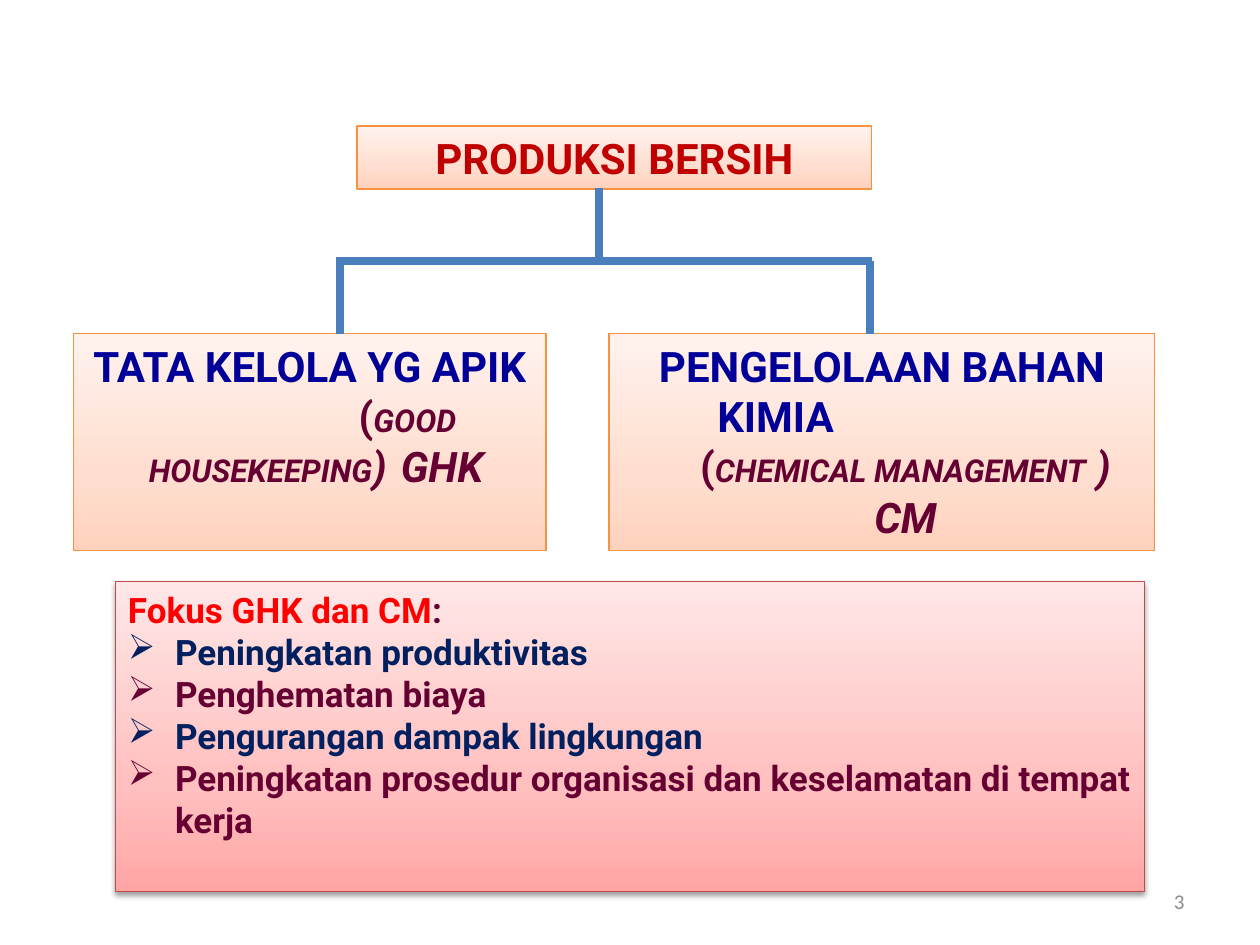
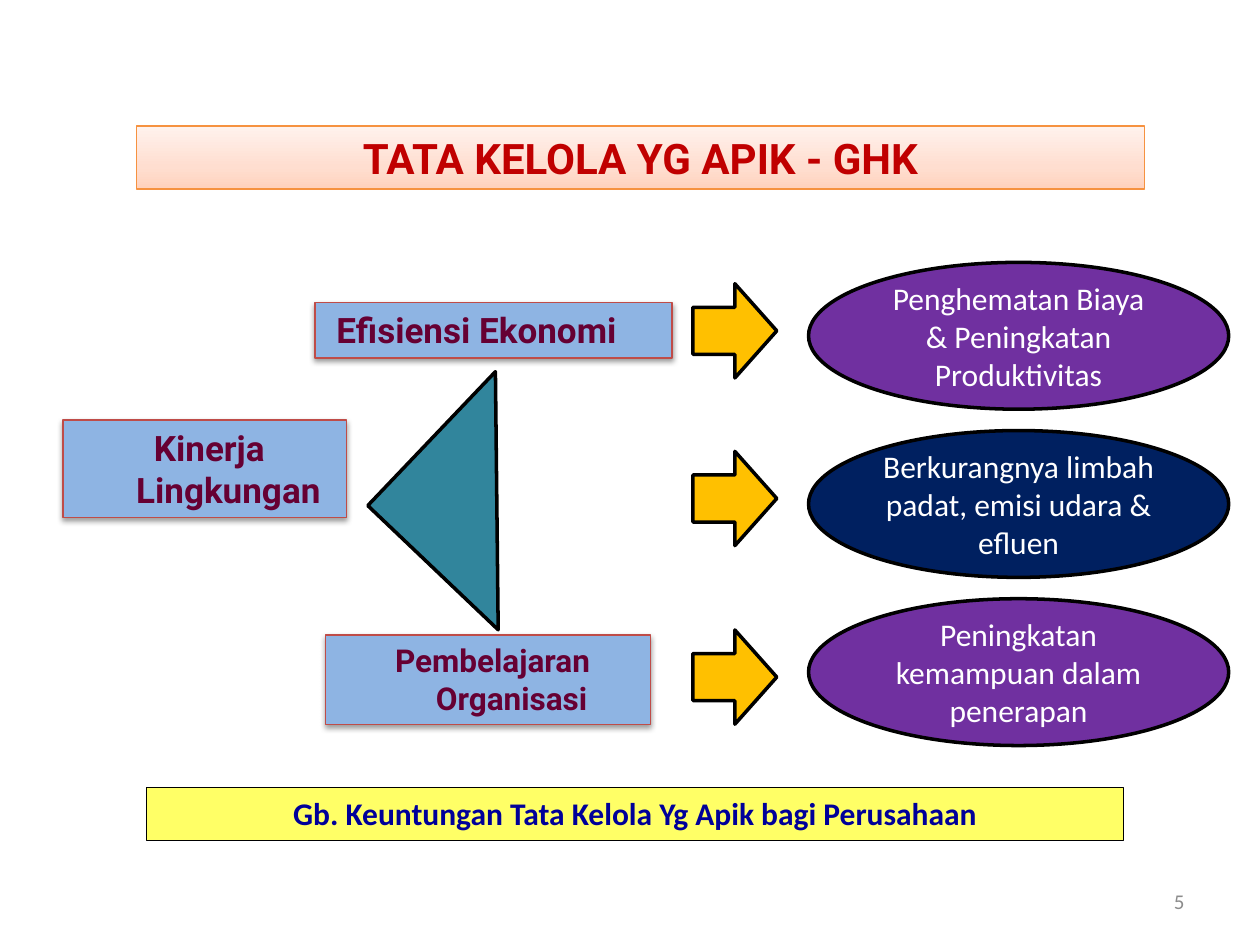
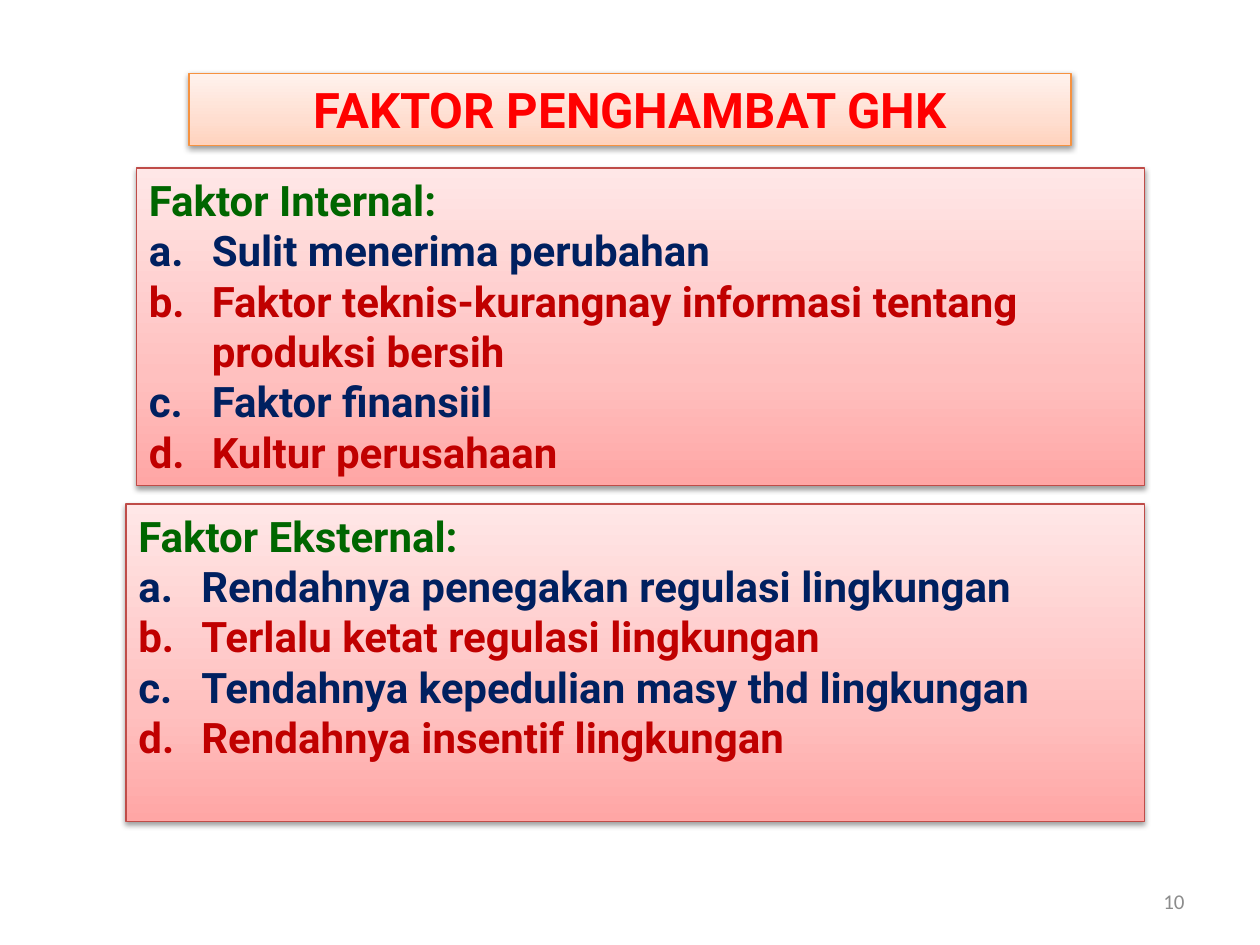
from collections import namedtuple

from lxml.etree import SubElement
from pptx import Presentation
from pptx.dml.color import RGBColor
from pptx.enum.shapes import MSO_CONNECTOR as Connector, MSO_SHAPE as Preset
from pptx.enum.text import MSO_ANCHOR as Anchor, PP_ALIGN as Align
from pptx.oxml.ns import qn
from pptx.util import Cm, Pt

COLORS = {
    "crimson": "C00000", "red": "FF0000", "blue": "000099", "navy": "002060",
    "plum": "660033", "green": "006600", "purple": "7030A0", "white": "FFFFFF",
    "black": "000000", "gray": "8C8C8C", "sky": "8EB4E3", "teal": "31859C",
    "gold": "FFC000", "yellow": "FFFF66", "steel": "4B7EBC",
    "orange_line": "F69240", "red_line": "BF4C48",
    "peach_dark": "FFD2BD", "peach": "FFDED0", "peach_light": "FFF2ED",
    "rose_dark": "FFA6A5", "rose": "FFC0BF", "rose_light": "FFE7E7",
}
PEACH = ("peach_dark", "peach", "peach_light")
ROSE = ("rose_dark", "rose", "rose_light")
STOPS = (0, 35000, 100000)
HEADING_FONT, BODY_FONT = "Roboto", "Calibri"
HANGING = 0.95


class Box(namedtuple("Box", "left top width height")):
    def inside(self, left, top, width, height):
        return Box(self.left + left, self.top + top, width, height)

    def lengths(self):
        return [Cm(value) for value in self]


def rgb(name):
    return RGBColor.from_string(COLORS[name])


def add_text(paragraph, text, size=24, color="black", bold=True, italic=False,
             font=HEADING_FONT):
    run = paragraph.add_run()
    run.text = text
    run.font.name = font
    run.font.size = Pt(size)
    run.font.bold = bold
    run.font.italic = italic
    run.font.color.rgb = rgb(color)


def next_paragraph(frame, align=Align.LEFT, margin=0, first=0, bullet=None, tab=None):
    paragraph = frame.paragraphs[0]
    if paragraph.runs:
        paragraph = frame.add_paragraph()
    paragraph.alignment = align
    properties = paragraph._p.get_or_add_pPr()
    properties.set("marL", str(Cm(margin)))
    properties.set("indent", str(Cm(first)))
    if bullet == "letter":
        SubElement(properties, qn("a:buAutoNum"), type="alphaLcPeriod")
    elif bullet:
        SubElement(properties, qn("a:buChar"), char=bullet)
    else:
        SubElement(properties, qn("a:buNone"))
    if tab:
        tabs = SubElement(properties, qn("a:tabLst"))
        SubElement(tabs, qn("a:tab"), pos=str(Cm(tab)), algn="l")
    return paragraph


def fill_gradient(shape, names):
    shape.fill.gradient()
    shape.fill.gradient_angle = 90
    stops = shape._element.spPr.find(".//" + qn("a:gsLst"))
    stops.clear()
    for position, name in zip(STOPS, names):
        stop = SubElement(stops, qn("a:gs"), pos=str(position))
        SubElement(stop, qn("a:srgbClr"), val=COLORS[name])


def cast_shadow(shape):
    effects = shape._element.spPr.find(qn("a:effectLst"))
    shadow = SubElement(effects, qn("a:outerShdw"), blurRad="40000", dist="20000",
                        dir="5400000", rotWithShape="0")
    color = SubElement(shadow, qn("a:srgbClr"), val=COLORS["black"])
    SubElement(color, qn("a:alpha"), val="38000")


def add_panel(slide, box, fill, line, weight=0.75, preset=Preset.RECTANGLE,
              shadow=False, anchor=Anchor.TOP):
    shape = slide.shapes.add_shape(preset, *box.lengths())
    shape.shadow.inherit = False
    if isinstance(fill, tuple):
        fill_gradient(shape, fill)
    else:
        shape.fill.solid()
        shape.fill.fore_color.rgb = rgb(fill)
    shape.line.color.rgb = rgb(line)
    shape.line.width = Pt(weight)
    if shadow:
        cast_shadow(shape)
    shape.text_frame.word_wrap = True
    shape.text_frame.vertical_anchor = anchor
    return shape


def add_title(slide, box, text, size=24, color="crimson", shadow=False):
    shape = add_panel(slide, box, PEACH, "orange_line", shadow=shadow)
    paragraph = next_paragraph(shape.text_frame, Align.CENTER, HANGING, -HANGING)
    add_text(paragraph, text, size=size, color=color)


def add_slide_number(slide, box, number):
    frame = slide.shapes.add_textbox(*box.lengths()).text_frame
    frame.word_wrap = True
    frame.vertical_anchor = Anchor.MIDDLE
    add_text(next_paragraph(frame, Align.RIGHT), str(number), size=12, color="gray",
             bold=False, font=BODY_FONT)


def add_list(slide, box, heading, items, size, bullet, indent, colors):
    frame = add_panel(slide, box, ROSE, "red_line", shadow=True).text_frame
    paragraph = next_paragraph(frame, margin=indent, first=-indent)
    for text, color in heading:
        add_text(paragraph, text, size=size, color=color)
    for index, item in enumerate(items):
        paragraph = next_paragraph(frame, margin=indent, first=-indent, bullet=bullet)
        add_text(paragraph, item, size=size, color=colors[index % len(colors)])


def add_tree_lines(slide, box):
    middle = box.height / 2
    trunk, left, right = 5.29, 0.08, box.width - 0.04
    for start_x, start_y, end_x, end_y in (
        (0, middle, box.width, middle),
        (trunk, 0, trunk, middle),
        (left, middle, left, box.height),
        (right, middle, right, box.height),
    ):
        line = slide.shapes.add_connector(
            Connector.STRAIGHT, Cm(box.left + start_x), Cm(box.top + start_y),
            Cm(box.left + end_x), Cm(box.top + end_y))
        line.line.color.rgb = rgb("steel")
        line.line.width = Pt(4.5)
        SubElement(line._element.spPr, qn("a:effectLst"))


def add_housekeeping(slide, box):
    frame = add_panel(slide, box, PEACH, "orange_line").text_frame
    add_text(next_paragraph(frame, Align.CENTER), "TATA KELOLA YG APIK", color="blue")
    paragraph = next_paragraph(frame, Align.CENTER, margin=3.94)
    add_text(paragraph, "(", color="plum")
    add_text(paragraph, "GOOD", size=18, color="plum", italic=True)
    paragraph = next_paragraph(frame, first=1.27, tab=7.04)
    add_text(paragraph, "HOUSEKEEPING", size=18, color="plum", italic=True)
    add_text(paragraph, ")\tGHK", color="plum", italic=True)


def add_chemicals(slide, box):
    frame = add_panel(slide, box, PEACH, "orange_line").text_frame
    add_text(next_paragraph(frame, Align.CENTER), "PENGELOLAAN BAHAN", color="blue")
    add_text(next_paragraph(frame, margin=1.93), "KIMIA", color="blue")
    paragraph = next_paragraph(frame, Align.CENTER, margin=HANGING)
    add_text(paragraph, "(", color="plum")
    add_text(paragraph, "CHEMICAL MANAGEMENT", size=18, color="plum", italic=True)
    add_text(paragraph, " )", color="plum", italic=True)
    paragraph = next_paragraph(frame, Align.CENTER, margin=HANGING)
    add_text(paragraph, "CM", color="plum", italic=True)


def add_performance(slide, box):
    for label_box, text, size, align in (
        (box.inside(5.08, 0, 7.2, 1.12), "Efisiensi Ekonomi", 20, Align.LEFT),
        (box.inside(0, 2.37, 5.72, 1.96), "Kinerja Lingkungan", 20, Align.CENTER),
        (box.inside(5.29, 6.7, 6.56, 1.8), "Pembelajaran Organisasi", 18, Align.CENTER),
    ):
        shape = add_panel(slide, label_box, "sky", "red_line", shadow=True)
        paragraph = next_paragraph(shape.text_frame, align, HANGING, 0.18 - HANGING)
        add_text(paragraph, text, size=size, color="plum")
    triangle = add_panel(slide, box.inside(6.93, 2.13, 3.63, 3.73), "teal", "black",
                         weight=2, preset=Preset.RIGHT_TRIANGLE)
    triangle.rotation = 43.6


def add_benefits(slide, box):
    benefits = (
        ("Penghematan Biaya & Peningkatan Produktivitas", "purple", 0.43),
        ("Berkurangnya limbah padat, emisi udara & efluen", "navy", 3.81),
        ("Peningkatan kemampuan dalam penerapan", "purple", 7.41),
    )
    oval_height = 2.96
    step = (box.height - oval_height) / (len(benefits) - 1)
    for index, (text, fill, arrow_top) in enumerate(benefits):
        add_panel(slide, box.inside(0, arrow_top, 1.69, 1.9), "gold", "black",
                  weight=2, preset=Preset.RIGHT_ARROW)
        oval = add_panel(slide, box.inside(2.33, index * step, 8.47, oval_height), fill,
                         "black", weight=2, preset=Preset.OVAL, anchor=Anchor.MIDDLE)
        add_text(next_paragraph(oval.text_frame, Align.CENTER), text, size=18,
                 color="white", bold=False, font=BODY_FONT)


def add_caption(slide, box, text):
    shape = add_panel(slide, box, "yellow", "black")
    add_text(next_paragraph(shape.text_frame, Align.CENTER), text, size=18,
             color="blue", font=BODY_FONT)


def build_production(slide, page):
    add_title(slide, page.inside(7.2, 2.54, 10.37, 1.27), "PRODUKSI BERSIH")
    add_housekeeping(slide, page.inside(1.48, 6.73, 9.53, 4.37))
    add_chemicals(slide, page.inside(12.28, 6.73, 11, 4.37))
    add_tree_lines(slide, page.inside(6.78, 3.78, 10.8, 2.95))
    add_list(slide, page.inside(2.33, 11.73, 20.75, 6.25),
             (("Fokus GHK dan CM", "red"), (":", "plum")),
             ("Peningkatan produktivitas", "Penghematan biaya",
              "Pengurangan dampak lingkungan",
              "Peningkatan prosedur organisasi dan keselamatan di tempat kerja"),
             size=20, bullet="➢", indent=HANGING, colors=("navy", "plum"))


def build_gains(slide, page):
    add_title(slide, page.inside(2.75, 2.54, 20.32, 1.27), "TATA KELOLA YG APIK - GHK")
    add_performance(slide, page.inside(1.27, 6.1, 12.28, 8.5))
    add_benefits(slide, page.inside(13.97, 5.29, 10.8, 9.74))
    add_caption(slide, page.inside(2.96, 15.88, 19.69, 1.06),
                "Gb. Keuntungan Tata Kelola Yg Apik bagi Perusahaan")


def build_barriers(slide, page):
    add_title(slide, page.inside(3.81, 1.48, 17.78, 1.45), "FAKTOR PENGHAMBAT GHK",
              size=28, color="red", shadow=True)
    for box, heading, items in (
        (page.inside(2.75, 3.39, 20.32, 6.4), "Faktor Internal:",
         ("Sulit menerima perubahan",
          "Faktor teknis-kurangnay informasi tentang produksi bersih",
          "Faktor finansiil", "Kultur perusahaan")),
        (page.inside(2.54, 10.16, 20.53, 6.4), "Faktor Eksternal:",
         ("Rendahnya penegakan regulasi lingkungan",
          "Terlalu ketat regulasi lingkungan",
          "Tendahnya kepedulian masy thd lingkungan",
          "Rendahnya insentif lingkungan")),
    ):
        add_list(slide, box, ((heading, "green"),), items, size=24, bullet="letter",
                 indent=1.27, colors=("navy", "crimson"))


def main():
    presentation = Presentation()
    page = Box(0, 0, 25.4, 19.05)
    presentation.slide_width = Cm(page.width)
    presentation.slide_height = Cm(page.height)
    blank = presentation.slide_layouts[6]
    for build, number in ((build_production, 3), (build_gains, 5), (build_barriers, 10)):
        slide = presentation.slides.add_slide(blank)
        build(slide, page)
        add_slide_number(slide, page.inside(18.2, 17.65, 5.93, 1.02), number)
    presentation.save("out.pptx")


if __name__ == "__main__":
    main()
